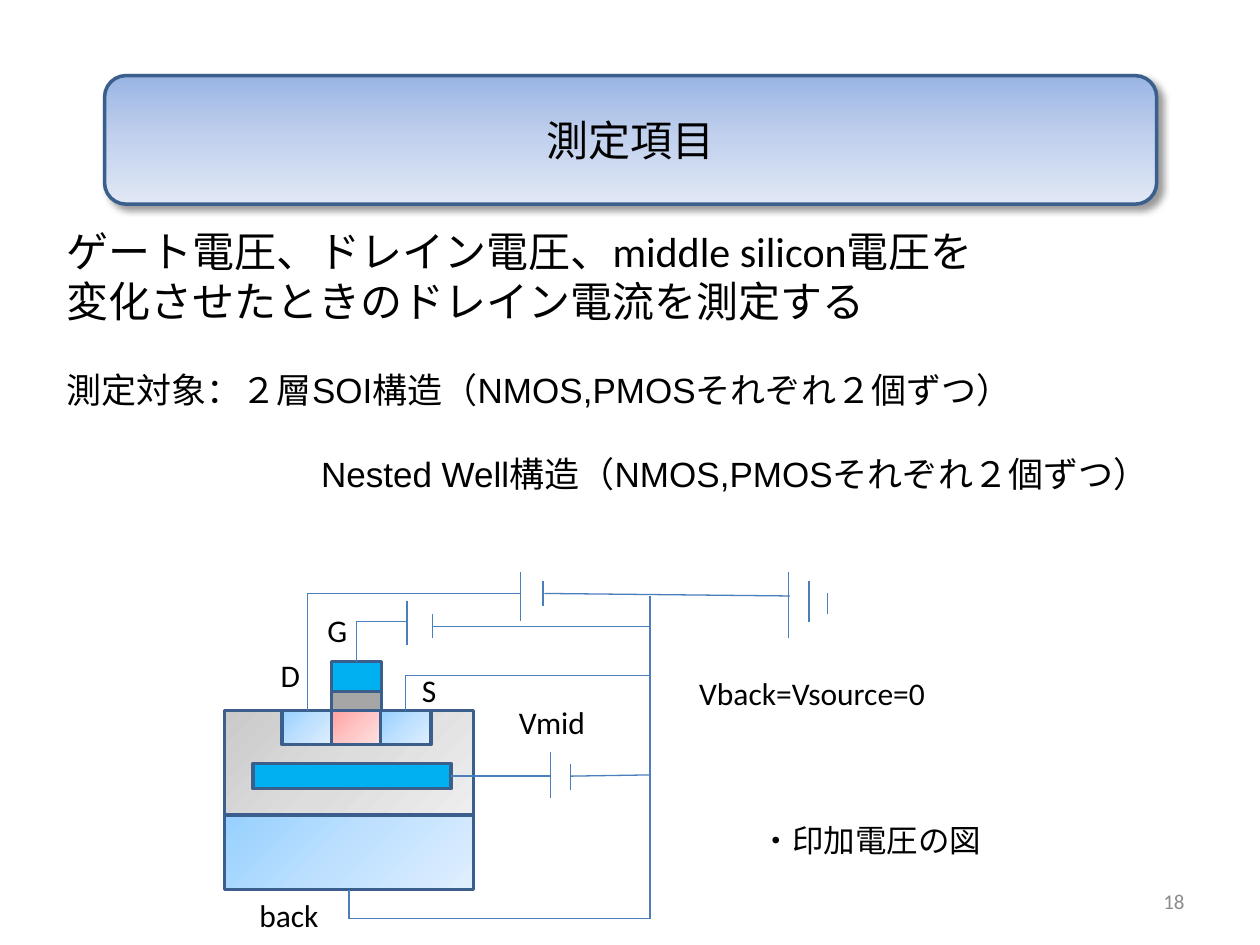
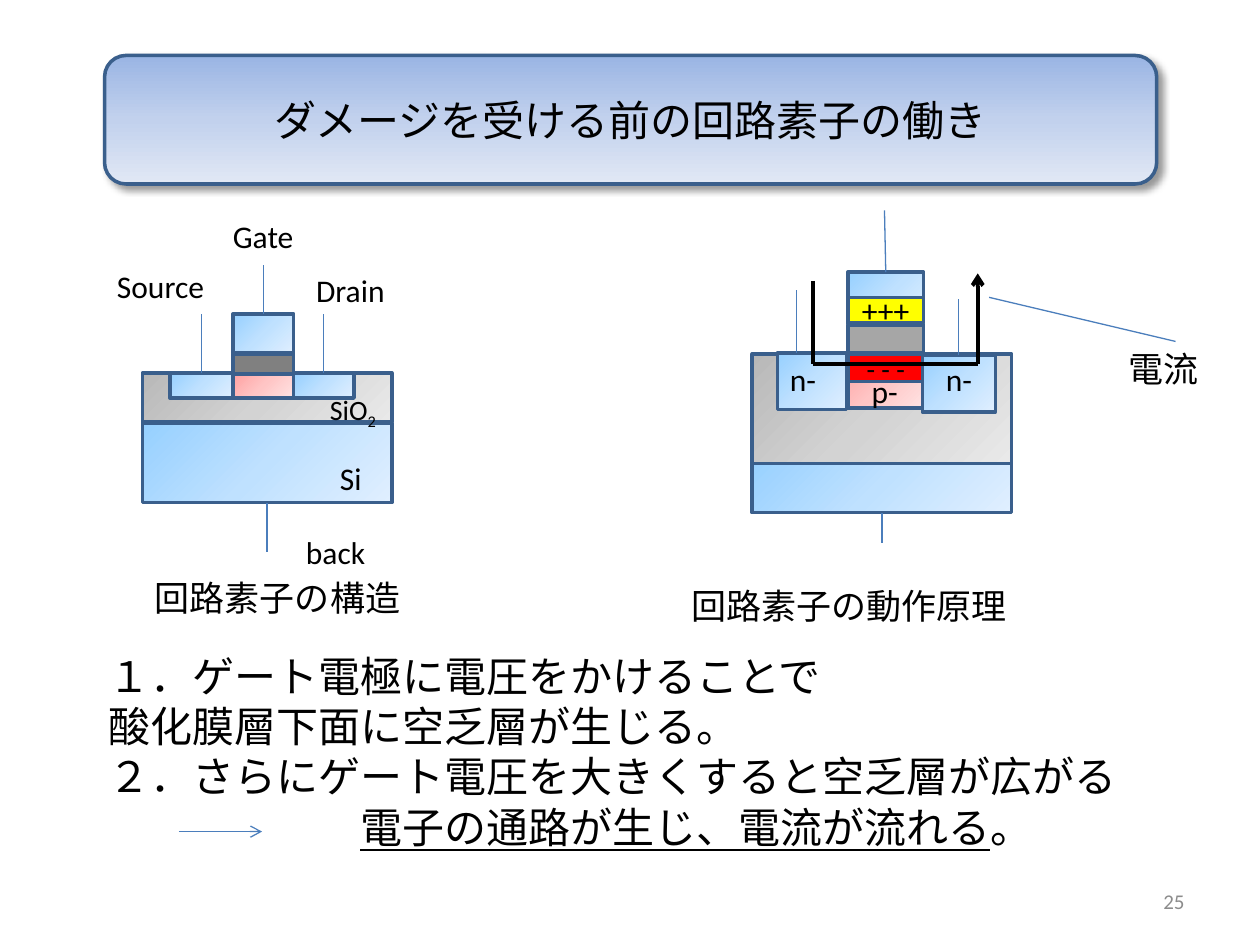
from copy import deepcopy
from dataclasses import dataclass
from typing import Any

from lxml import etree
from pptx import Presentation
from pptx.dml.color import RGBColor
from pptx.enum.shapes import MSO_CONNECTOR, MSO_SHAPE
from pptx.enum.text import MSO_ANCHOR, PP_ALIGN
from pptx.oxml.ns import qn
from pptx.util import Inches, Pt

RECT, ROUNDED = MSO_SHAPE.RECTANGLE, MSO_SHAPE.ROUNDED_RECTANGLE
STRAIGHT = MSO_CONNECTOR.STRAIGHT
MIDDLE, TOP = MSO_ANCHOR.MIDDLE, MSO_ANCHOR.TOP
LEFT, CENTER, RIGHT = PP_ALIGN.LEFT, PP_ALIGN.CENTER, PP_ALIGN.RIGHT
SITE_TOP, SITE_RIGHT, SITE_BOTTOM = 0, 3, 2

LATIN, BODY_LATIN, CJK = "Calibri", "Arial", "Noto Sans CJK JP"
COLORS = {
    "text": "000000", "number": "8C8C8C", "outline": "3A5F8C", "wire": "4B7EBC",
    "cyan": "00B0F0", "gray": "A6A6A6", "dark_gray": "808080",
    "electrons": "FF0000", "charge": "FFFF00",
}
# Three stops at 0, 50 and 100 %, and the clockwise angle
GRADIENTS = {
    "banner": (("9AB5E4", "C2D1ED", "E1E8F5"), 90),
    "silicon": (("96D0FF", "BFE1FF", "E0EFFF"), 45),
    "channel": (("FFA0A0", "FFC5C5", "FFE3E3"), 45),
    "light_oxide": (("CACACA", "DDDDDD", "EEEEEE"), 45),
    "oxide": (("B8B8B8", "D3D3D3", "E9E9E9"), 45),
}


def rgb(name):
    return RGBColor.from_string(COLORS[name])


def style_run(run, size, latin=LATIN, color="text"):
    font = run.font
    font.size, font.name = Pt(size), latin
    font.color.rgb = rgb(color)
    east_asian = etree.SubElement(run._r.get_or_add_rPr(), qn("a:ea"))
    east_asian.set("typeface", CJK)


def add_run(paragraph, text, size, latin=LATIN):
    run = paragraph.add_run()
    run.text = text
    style_run(run, size, latin)
    return run


def write(shape, text, size, align=LEFT, anchor=TOP, latin=LATIN, color="text"):
    frame = shape.text_frame
    frame.text = text
    frame.word_wrap = True
    frame.vertical_anchor = anchor
    for paragraph in frame.paragraphs:
        paragraph.alignment = align
        for run in paragraph.runs:
            style_run(run, size, latin, color)
    return frame


def indent_first_line(paragraph, inches):
    paragraph._p.get_or_add_pPr().set("indent", str(Inches(inches)))


def paint(shape, fill_name):
    fill = shape.fill
    if fill_name in COLORS:
        fill.solid()
        fill.fore_color.rgb = rgb(fill_name)
        return
    stop_colors, angle = GRADIENTS[fill_name]
    fill.gradient()
    fill.gradient_angle = 360 - angle
    stops = shape._element.spPr.find(qn("a:gradFill")).find(qn("a:gsLst"))
    stops.append(deepcopy(stops[0]))
    for index, stop in enumerate(fill.gradient_stops):
        stop.position = index / 2
        stop.color.rgb = RGBColor.from_string(stop_colors[index])


def cast_shadow(shape):
    effects = shape._element.spPr.find(qn("a:effectLst"))
    shadow = etree.SubElement(effects, qn("a:outerShdw"), blurRad=str(Pt(4)),
                              dist=str(Pt(3)), dir="2700000", rotWithShape="0")
    color = etree.SubElement(shadow, qn("a:srgbClr"), val=COLORS["text"])
    etree.SubElement(color, qn("a:alpha"), val="40000")


@dataclass
class Region:
    """Draws on a slide, measuring inches from its own left top corner."""
    slide: Any
    left: float
    top: float

    def place(self, x, y):
        return Inches(self.left + x), Inches(self.top + y)

    def block(self, x, y, width, height, fill, kind=RECT):
        shape = self.slide.shapes.add_shape(
            kind, *self.place(x, y), Inches(width), Inches(height))
        shape.shadow.inherit = False
        paint(shape, fill)
        shape.line.color.rgb = rgb("outline")
        shape.line.width = Pt(2)
        return shape

    def label(self, text, x, y, width, height=0.4, size=18, **style):
        box = self.slide.shapes.add_textbox(
            *self.place(x, y), Inches(width), Inches(height))
        return write(box, text, size, **style)

    def wire(self, *points, start=None, color="wire", weight=0.75, arrow=False):
        """Joins the points; start is a shape and its connection site."""
        for index, (begin, end) in enumerate(zip(points, points[1:])):
            line = self.slide.shapes.add_connector(
                STRAIGHT, *self.place(*begin), *self.place(*end))
            line.line.color.rgb = rgb(color)
            line.line.width = Pt(weight)
            properties = line._element.spPr
            if arrow and index == len(points) - 2:
                etree.SubElement(properties.find(qn("a:ln")), qn("a:tailEnd"), type="arrow")
            etree.SubElement(properties, qn("a:effectLst"))
            if start and index == 0:
                line.begin_connect(*start)


def add_frame(presentation, title, title_top, number):
    """Blank slide with the title banner and the slide number."""
    slide = presentation.slides.add_slide(presentation.slide_layouts[6])
    page = Region(slide, 0, 0)
    banner = page.block(0.83, title_top, 8.35, 1.02, "banner", ROUNDED)
    cast_shadow(banner)
    write(banner, title, 24, CENTER, MIDDLE, CJK)
    page.label(number, 7.17, 6.95, 2.33, size=12, align=RIGHT, anchor=MIDDLE, color="number")
    return slide


def add_measurement_text(region):
    frame = region.label("ゲート電圧、ドレイン電圧、middle silicon電圧を\n"
                         "変化させたときのドレイン電流を測定する", 0, 0, 9.13, 3.47, size=24)
    target = frame.add_paragraph()
    add_run(target, "測定対象：", 20)
    add_run(target, "２層SOI構造（NMOS,PMOSそれぞれ２個ずつ）", 20, BODY_LATIN)
    nested = frame.add_paragraph()
    add_run(nested, "Nested Well構造（NMOS,PMOSそれぞれ２個ずつ）", 20, BODY_LATIN)
    indent_first_line(nested, 2.02)
    for paragraph in (target, nested):
        paragraph.space_before = Pt(24)


def add_bias_circuit(region):
    # Transistor on two silicon layers
    substrate = region.block(0, 1.93, 1.98, 0.59, "silicon")
    region.block(0, 1.1, 1.98, 0.83, "light_oxide")
    drain, _, source = [
        region.block(0.46 + 0.39 * i, 1.1, 0.4, 0.27, fill)
        for i, fill in enumerate(("silicon", "channel", "silicon"))]
    region.block(0.85, 0.94, 0.4, 0.16, "gray")
    gate = region.block(0.85, 0.71, 0.4, 0.24, "cyan")
    middle_silicon = region.block(0.23, 1.52, 1.57, 0.2, "cyan")

    # Wires from the terminals to the common line
    common = 3.38
    region.wire((1.8, 1.62), (2.59, 1.62), start=(middle_silicon, SITE_RIGHT))
    region.wire((0.66, 1.1), (0.66, 0.17), (2.35, 0.17), start=(drain, SITE_TOP))
    region.wire((1.05, 0.71), (1.05, 0.39), (1.45, 0.39), start=(gate, SITE_TOP))
    region.wire((1.44, 1.1), (1.44, 0.82), (common, 0.82), start=(source, SITE_TOP))
    region.wire((0.99, 2.52), (0.99, 2.75), (common, 2.75), (common, 0.19),
                start=(substrate, SITE_BOTTOM))
    region.wire((2.54, 0.17), (4.49, 0.19))
    region.wire((1.65, 0.43), (common, 0.43))
    region.wire((2.75, 1.62), (common, 1.61))

    # Plates of the batteries and the ground
    for x, top, bottom in (
            (2.59, 1.43, 1.79), (2.75, 1.52, 1.73),
            (1.45, 0.23, 0.58), (1.65, 0.33, 0.52),
            (2.35, 0, 0.39), (2.53, 0.07, 0.27),
            (4.48, 0, 0.52), (4.64, 0.07, 0.4), (4.79, 0.17, 0.33)):
        region.wire((x, top), (x, bottom))

    for text, x, y, width in (
            ("D", 0.35, 0.62, 0.47), ("G", 0.72, 0.26, 0.47), ("S", 1.47, 0.74, 0.47),
            ("Vback=Vsource=0", 3.67, 0.76, 2.2), ("back", 0.18, 2.52, 1.3),
            ("Vmid", 2.24, 0.99, 0.88), ("・印加電圧の図", 4.16, 1.93, 2.83)):
        region.label(text, x, y, width)


def add_structure(region):
    # Layers
    substrate = region.block(0, 1.69, 1.98, 0.63, "silicon")
    region.block(0, 1.29, 1.98, 0.39, "oxide")
    source = region.block(0.22, 1.29, 0.5, 0.2, "silicon")
    region.block(0.72, 1.29, 0.48, 0.2, "channel")
    drain = region.block(1.2, 1.29, 0.48, 0.2, "silicon")
    region.block(0.72, 1.14, 0.48, 0.16, "dark_gray")
    gate = region.block(0.72, 0.82, 0.48, 0.31, "silicon")

    # Terminals
    region.wire((0.99, 2.32), (0.99, 2.71), start=(substrate, SITE_BOTTOM))
    region.wire((0.96, 0.82), (0.96, 0.43), start=(gate, SITE_TOP))
    region.wire((1.44, 1.29), (1.44, 0.82), start=(drain, SITE_TOP))
    region.wire((0.47, 1.29), (0.47, 0.82), start=(source, SITE_TOP))

    for text, x, y, width in (
            ("back", 1.2, 2.51, 1.06), ("Gate", 0.62, 0, 0.89), ("Drain", 1.28, 0.43, 0.92),
            ("Source", -0.3, 0.4, 0.92), ("Si", 1.47, 1.92, 0.7)):
        region.label(text, x, y, width)
    formula = region.label("SiO", 1.39, 1.4, 1.06, size=16).paragraphs[0]
    subscript = add_run(formula, "2", 16)
    subscript._r.get_or_add_rPr().set("baseline", "-25000")
    region.label("回路素子の構造", 0, 2.86, 2.41, size=20)


def add_principle(region):
    # Layers
    substrate = region.block(0, 1.93, 2.06, 0.47, "silicon")
    region.block(0, 1.14, 2.06, 0.87, "oxide")
    region.block(0.2, 1.13, 0.55, 0.45, "silicon")
    region.block(0.76, 1.14, 0.6, 0.43, "channel")
    region.block(0.76, 0.91, 0.6, 0.22, "gray")
    gate = region.block(0.76, 0.49, 0.6, 0.41, "silicon")
    electrons = region.block(0.76, 1.14, 0.6, 0.22, "electrons")
    write(electrons, "- - -", 16, CENTER, MIDDLE)
    charge = region.block(0.76, 0.69, 0.6, 0.2, "charge")
    write(charge, "+++", 18, CENTER, MIDDLE)
    drain = region.block(1.35, 1.15, 0.58, 0.45, "silicon")

    # Terminals
    region.wire((1.03, 2.4), (1.03, 2.64), start=(substrate, SITE_BOTTOM))
    region.wire((1.06, 0.49), (1.05, 0), start=(gate, SITE_TOP))
    region.wire((0.35, 1.13), (0.35, 0.63))
    region.wire((1.64, 1.15), (1.64, 0.7), start=(drain, SITE_TOP))

    # Current path and its leader
    region.wire((0.48, 0.56), (0.48, 1.22), (1.79, 1.22), (1.79, 0.5),
                color="text", weight=2.25, arrow=True)
    region.wire((1.88, 0.69), (3.36, 1.04))

    region.label("電流", 2.89, 1.04, 0.94, size=20)
    for text, x, y in (("n-", 0.2, 1.14), ("p-", 0.85, 1.23), ("n-", 1.44, 1.14)):
        region.label(text, x, y, 0.5)
    region.label("回路素子の動作原理", -0.58, 2.92, 3.06, size=20)


def add_explanation(region):
    frame = region.label("１．ゲート電極に電圧をかけることで\v酸化膜層下面に空乏層が生じる。\n"
                         "２．さらにゲート電圧を大きくすると空乏層が広がる",
                         0, 0, 8.5, 1.72, size=24)
    result = frame.add_paragraph()
    indent_first_line(result, 2)
    add_run(result, "電子の通路が生じ、電流が流れる", 24).font.underline = True
    add_run(result, "。", 24)
    region.wire((0.66, 1.49), (1.32, 1.49), arrow=True)


def main():
    presentation = Presentation()
    presentation.slide_width, presentation.slide_height = Inches(10), Inches(7.5)

    measurement = add_frame(presentation, "測定項目", 0.6, "18")
    add_measurement_text(Region(measurement, 0.43, 1.74))
    add_bias_circuit(Region(measurement, 1.78, 4.54))

    operation = add_frame(presentation, "ダメージを受ける前の回路素子の働き", 0.44, "25")
    add_structure(Region(operation, 1.13, 1.67))
    add_principle(Region(operation, 5.97, 1.67))
    add_explanation(Region(operation, 0.76, 5.11))

    presentation.save("out.pptx")


if __name__ == "__main__":
    main()
